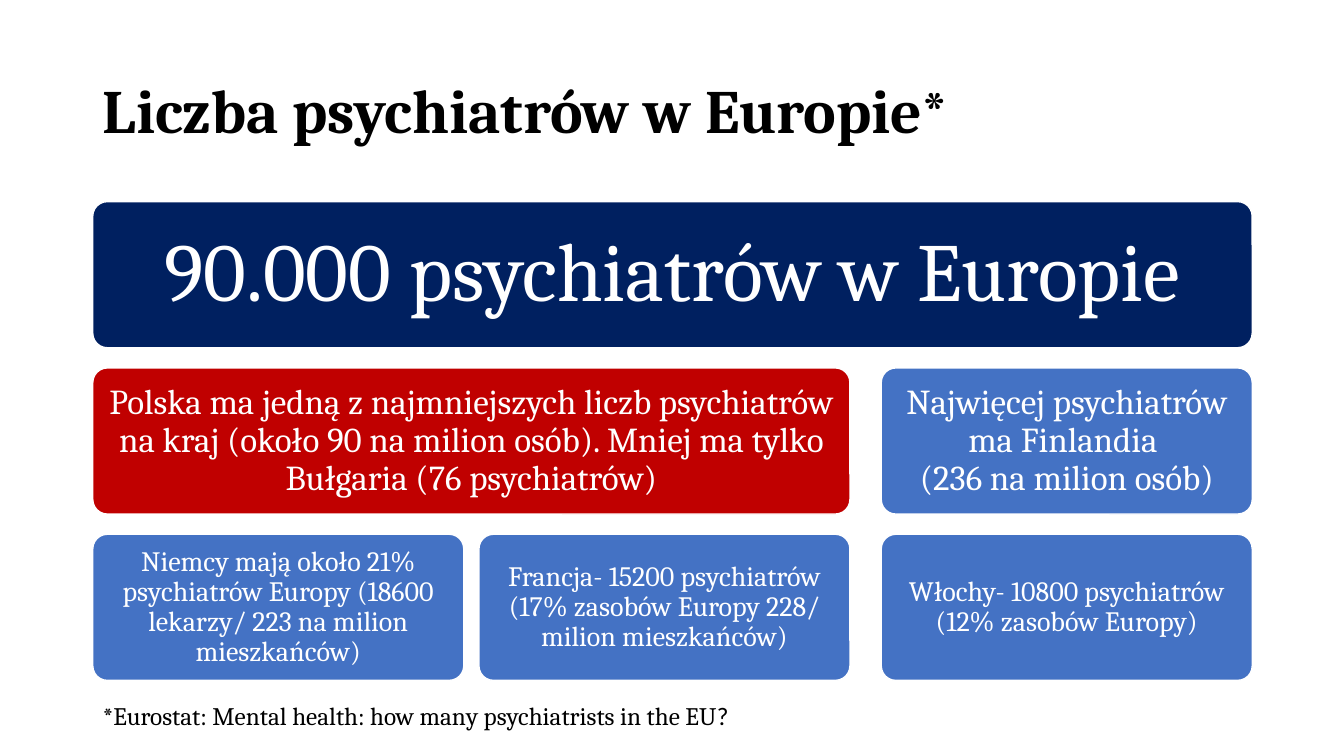
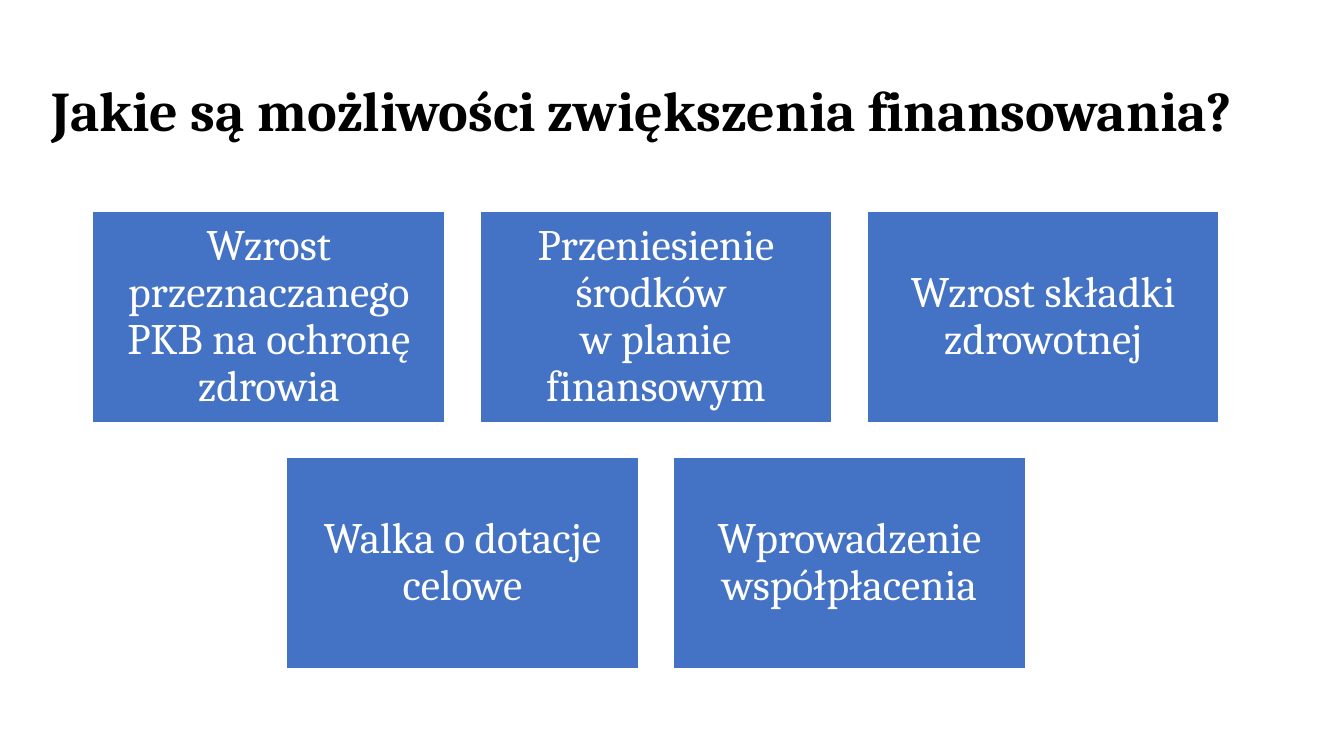
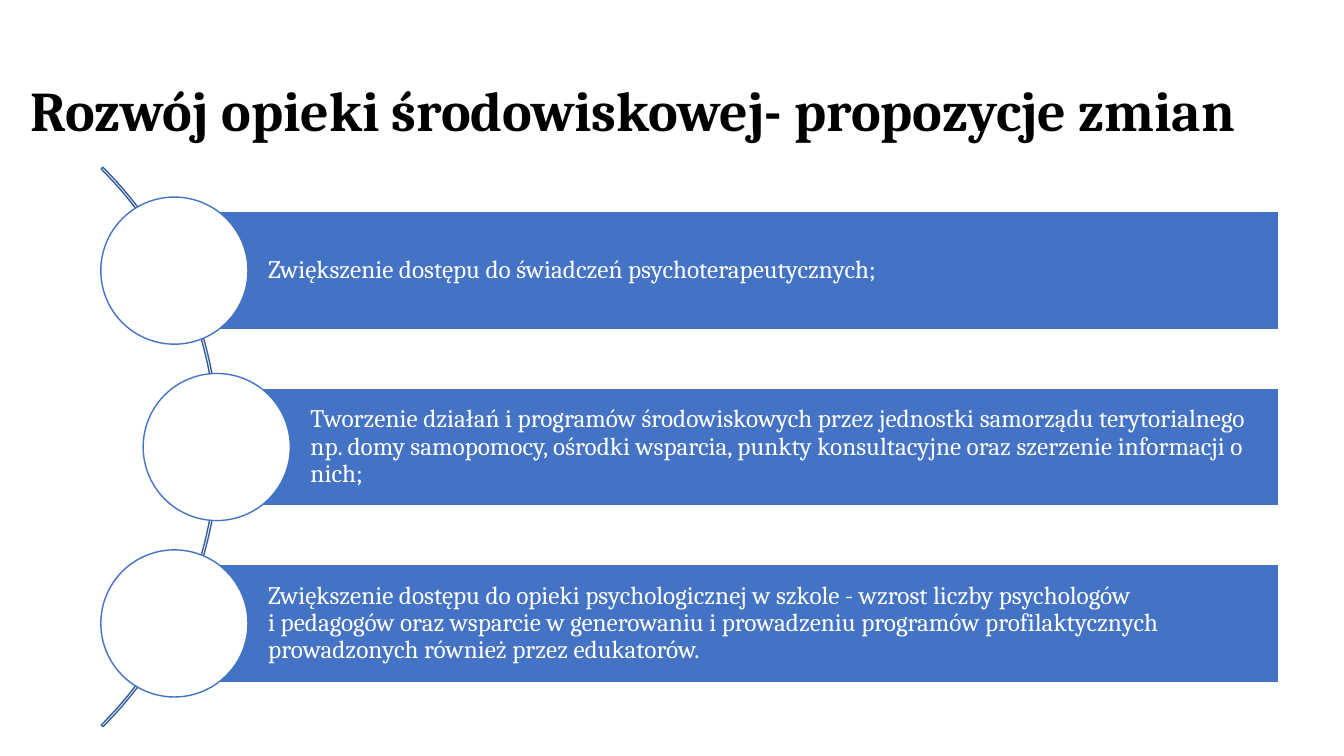
from pptx import Presentation
from pptx.dml.color import RGBColor
from pptx.enum import shapes, text
from pptx.util import Inches, Pt

NAVY = RGBColor(0x00, 0x20, 0x60)
RED = RGBColor(0xC0, 0x00, 0x00)
BLUE = RGBColor(0x44, 0x72, 0xC4)
DARK_BLUE = RGBColor(0x36, 0x5B, 0x9D)
WHITE = RGBColor(0xFF, 0xFF, 0xFF)
BLACK = RGBColor(0x00, 0x00, 0x00)

SHAPE = shapes.MSO_SHAPE
LEFT, CENTER = text.PP_ALIGN.LEFT, text.PP_ALIGN.CENTER
MARGIN = 0.92


class Deck:
    """Shared style and the slide being built."""

    font = "Cambria"
    line_spacing = 0.9

    def __init__(self):
        self.prs = Presentation()
        self.prs.slide_width = Inches(13.33)
        self.prs.slide_height = Inches(7.5)
        self.slide = None

    def add_words(self, paragraph, words, size, color, bold=False, font=None):
        run = paragraph.add_run()
        run.text = words
        run.font.name = font or self.font
        run.font.size = Pt(size)
        run.font.bold = bold
        run.font.color.rgb = color

    def fill_frame(self, frame, words, size, color, align, bold=False):
        """Fill a middle-anchored frame; a newline becomes a line break."""
        frame.word_wrap = True
        frame.auto_size = text.MSO_AUTO_SIZE.NONE
        frame.vertical_anchor = text.MSO_ANCHOR.MIDDLE
        paragraph = frame.paragraphs[0]
        paragraph.alignment = align
        paragraph.line_spacing = self.line_spacing
        for number, line in enumerate(words.split("\n")):
            if number:
                paragraph.add_line_break()
            self.add_words(paragraph, line, size, color, bold)

    def new_slide(self, title, left, width, size):
        self.slide = self.prs.slides.add_slide(self.prs.slide_layouts[5])
        heading = self.slide.shapes.title
        heading.left, heading.top = Inches(left), Inches(0.4)
        heading.width, heading.height = Inches(width), Inches(1.45)
        self.fill_frame(heading.text_frame, title, size, BLACK, LEFT, bold=True)

    def shape(self, kind, left, top, width, height, fill, line):
        shape = self.slide.shapes.add_shape(
            kind, Inches(left), Inches(top), Inches(width), Inches(height))
        shape.shadow.inherit = False
        if fill is None:
            shape.fill.background()
        else:
            shape.fill.solid()
            shape.fill.fore_color.rgb = fill
        shape.line.color.rgb = line
        shape.line.width = Pt(1)
        return shape

    def box(self, kind, place, fill, words, size, inset, align=CENTER, indent=None):
        box = self.shape(kind, *place, fill, WHITE)
        frame = box.text_frame
        frame.margin_top = frame.margin_right = frame.margin_bottom = Inches(inset)
        frame.margin_left = Inches(inset if indent is None else indent)
        self.fill_frame(frame, words, size, WHITE, align)
        return box

    def footnote(self, left, top, width, height, runs):
        note = self.slide.shapes.add_textbox(
            Inches(left), Inches(top), Inches(width), Inches(height))
        note.text_frame.word_wrap = True
        for words, font in runs:
            self.add_words(note.text_frame.paragraphs[0], words, 18, BLACK, font=font)


def psychiatrist_numbers(deck):
    deck.new_slide("Liczba psychiatrów w Europie*", MARGIN, 11.5, 44)
    columns = (MARGIN, 4.75, 8.74)
    card_width, card_height, row_pitch = 3.68, 1.45, 1.65
    # row, first column, last column, fill, size, inset, words
    cards = [
        (0, 0, 2, NAVY, 59, 0.25, "90.000 psychiatrów w Europie"),
        (1, 0, 1, RED, 25, 0.1,
         "Polska ma jedną z najmniejszych liczb psychiatrów na kraj "
         "(około 90 na milion osób). Mniej ma tylko Bułgaria (76 psychiatrów)"),
        (1, 2, 2, BLUE, 25, 0.1,
         "Najwięcej psychiatrów ma Finlandia \n(236 na milion osób)"),
        (2, 0, 0, BLUE, 20, 0.08,
         "Niemcy mają około 21% psychiatrów Europy "
         "(18600 lekarzy/ 223 na milion mieszkańców)"),
        (2, 1, 1, BLUE, 20, 0.08,
         "Francja- 15200 psychiatrów (17% zasobów Europy 228/ milion mieszkańców)"),
        (2, 2, 2, BLUE, 20, 0.08,
         "Włochy- 10800 psychiatrów (12% zasobów Europy)"),
    ]
    for row, first, last, fill, size, inset, words in cards:
        width = columns[last] + card_width - columns[first]
        place = (columns[first], 2 + row * row_pitch, width, card_height)
        card = deck.box(SHAPE.ROUNDED_RECTANGLE, place, fill, words, size, inset)
        card.adjustments[0] = 0.1
    deck.footnote(MARGIN, 6.9, 7.59, 0.4, [
        ("*Eurostat: Mental health: how many psychiatrists in the EU", deck.font),
        ("?", "Calibri")])


def funding_options(deck):
    deck.new_slide("Jakie są możliwości zwiększenia finansowania?", 0.41, 12.92, 40)
    width, height, gap = 3.49, 2.09, 0.35
    rows = [
        ["Wzrost przeznaczanego PKB na ochronę zdrowia",
         "Przeniesienie środków \nw planie finansowym",
         "Wzrost składki zdrowotnej"],
        ["Walka o dotacje celowe", "Wprowadzenie współpłacenia"],
    ]
    for row, options in enumerate(rows):
        # A shorter row is centred under the full one
        row_left = MARGIN + (len(rows[0]) - len(options)) * (width + gap) / 2
        for column, option in enumerate(options):
            place = (row_left + column * (width + gap),
                     2.1 + row * (height + gap), width, height)
            deck.box(SHAPE.RECTANGLE, place, BLUE, option, 31, 0.13)


def community_care(deck):
    deck.new_slide("Rozwój opieki środowiskowej- propozycje zmian", 0.2, 12.83, 40)
    # Arc behind the circles: start angle, end angle, thickness
    arc = deck.shape(SHAPE.BLOCK_ARC, -5.68, 0.51, 7.85, 7.85, None, DARK_BLUE)
    for number, value in enumerate((189, 27, 0.003)):
        arc.adjustments[number] = value
    # Bars with a circle centred on each left end
    bar_right, bar_height, bar_pitch, circle = 12.68, 1.17, 1.75, 1.46
    proposals = [
        (1.73, "Zwiększenie dostępu do świadczeń psychoterapeutycznych;"),
        (2.15, "Tworzenie działań i programów środowiskowych przez jednostki "
               "samorządu terytorialnego np. domy samopomocy, ośrodki wsparcia, "
               "punkty konsultacyjne oraz szerzenie informacji o nich;"),
        (1.73, "Zwiększenie dostępu do opieki psychologicznej w szkole - wzrost "
               "liczby psychologów \ni pedagogów oraz wsparcie w generowaniu i "
               "prowadzeniu programów profilaktycznych prowadzonych również "
               "przez edukatorów."),
    ]
    for number, (left, proposal) in enumerate(proposals):
        top = 2.1 + number * bar_pitch
        deck.box(SHAPE.RECTANGLE, (left, top, bar_right - left, bar_height),
                 BLUE, proposal, 18, 0.05, LEFT, indent=0.93)
        deck.shape(SHAPE.OVAL, left - circle / 2, top + (bar_height - circle) / 2,
                   circle, circle, WHITE, BLUE)


def main():
    deck = Deck()
    psychiatrist_numbers(deck)
    funding_options(deck)
    community_care(deck)
    deck.prs.save("out.pptx")


if __name__ == "__main__":
    main()
